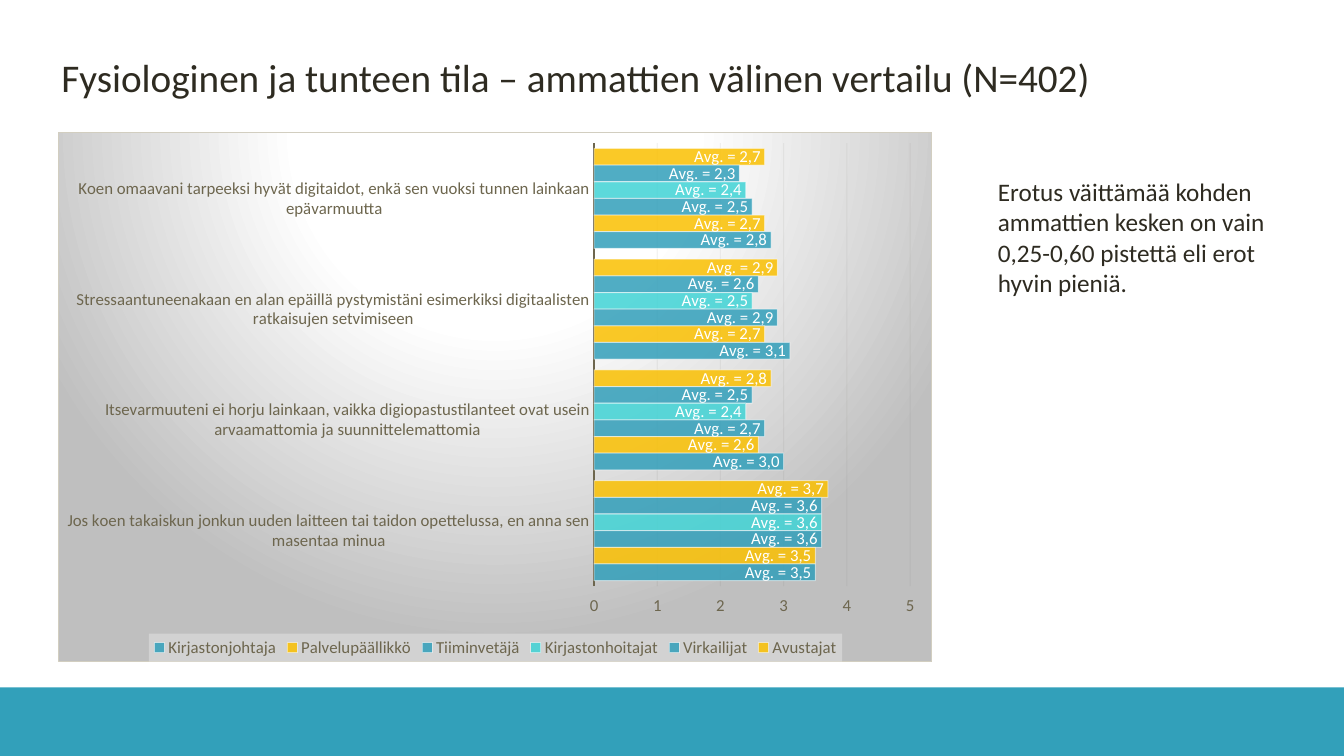
from lxml import etree
from pptx import Presentation
from pptx import util as u
from pptx.chart.data import CategoryChartData
from pptx.dml.color import RGBColor
from pptx.enum import chart as ch, shapes, text
from pptx.oxml import parse_xml
from pptx.oxml.ns import nsdecls, qn

WIDTH, HEIGHT = 40 / 3, 7.5
FONT = "Calibri"
INK, MUTED, WHITE, BAND = "2E2B21", "6D664E", "FFFFFF", "32A0BA"
BLUE, YELLOW, TURQUOISE = "329FBA", "FAC002", "40D3D5"

STATEMENTS = [
    "Koen omaavani tarpeeksi hyvät digitaidot, enkä sen vuoksi tunnen lainkaan epävarmuutta",
    "Stressaantuneenakaan en alan epäillä pystymistäni esimerkiksi digitaalisten ratkaisujen setvimiseen",
    "Itsevarmuuteni ei horju lainkaan, vaikka digiopastustilanteet ovat usein arvaamattomia ja suunnittelemattomia",
    "Jos koen takaiskun jonkun uuden laitteen tai taidon opettelussa, en anna sen masentaa minua",
]
PROFESSIONS = [
    ("Avustajat", YELLOW, (2.7, 2.9, 2.8, 3.7)),
    ("Virkailijat", BLUE, (2.3, 2.6, 2.5, 3.6)),
    ("Kirjastonhoitajat", TURQUOISE, (2.4, 2.5, 2.4, 3.6)),
    ("Tiiminvetäjä", BLUE, (2.5, 2.9, 2.7, 3.6)),
    ("Palvelupäällikkö", YELLOW, (2.7, 2.7, 2.6, 3.5)),
    ("Kirjastonjohtaja", BLUE, (2.8, 3.1, 3.0, 3.5)),
]
CHART_BACKGROUND = f"""<c:spPr {nsdecls('c', 'a')}>
  <a:gradFill><a:gsLst>
    <a:gs pos="0"><a:srgbClr val="FFFFFF"/></a:gs>
    <a:gs pos="39000"><a:srgbClr val="FFFFFF"/></a:gs>
    <a:gs pos="100000"><a:srgbClr val="BFBFBF"/></a:gs>
  </a:gsLst><a:path path="circle">
    <a:fillToRect l="50000" t="-80000" r="50000" b="180000"/>
  </a:path></a:gradFill>
  <a:ln w="9525"><a:solidFill><a:srgbClr val="D2CEC0"/></a:solidFill></a:ln>
</c:spPr>"""
LEGEND_BACKGROUND = f"""<c:spPr {nsdecls('c', 'a')}>
  <a:solidFill><a:srgbClr val="F2F2F2"><a:alpha val="39000"/></a:srgbClr></a:solidFill>
</c:spPr>"""


def rgb(color):
    return RGBColor.from_string(color)


def apply(target, values):
    for name, value in values.items():
        setattr(target, name, value)


def style_font(font, size, color):
    apply(font, {"name": FONT, "size": u.Pt(size), "bold": False})
    font.color.rgb = rgb(color)


def paint(fill, color, opacity=100):
    fill.solid()
    fill.fore_color.rgb = rgb(color)
    if opacity < 100:
        for shade in fill._xPr.find(qn("a:solidFill")):
            etree.SubElement(shade, qn("a:alpha")).set("val", str(opacity * 1000))


def stroke(line, color, width, opacity=100):
    paint(line.fill, color, opacity)
    line.width = u.Pt(width)


def box(*lengths):
    return [u.Inches(length) for length in lengths]


def add_panel(slide, place, color):
    panel = slide.shapes.add_shape(shapes.MSO_SHAPE.RECTANGLE, *box(*place))
    panel.shadow.inherit = False
    paint(panel.fill, color)
    panel.line.fill.background()
    return panel


def write(shape, wording, size, anchor):
    frame = shape.text_frame
    apply(frame, {
        "word_wrap": True, "vertical_anchor": anchor,
        "auto_size": text.MSO_AUTO_SIZE.SHAPE_TO_FIT_TEXT,
        "margin_left": u.Inches(0.13), "margin_right": u.Inches(0.13),
        "margin_top": u.Inches(0.07), "margin_bottom": u.Inches(0.07),
    })
    paragraph = frame.paragraphs[0]
    paragraph.text = wording
    paragraph.alignment = text.PP_ALIGN.LEFT
    style_font(paragraph.runs[0].font, size, INK)


def style_axes(chart):
    statements, scale = chart.category_axis, chart.value_axis
    for axis in (statements, scale):
        apply(axis, {"major_tick_mark": ch.XL_TICK_MARK.NONE,
                     "minor_tick_mark": ch.XL_TICK_MARK.NONE})
        style_font(axis.tick_labels.font, 12, MUTED)
    apply(statements, {"reverse_order": True, "has_major_gridlines": False})
    stroke(statements.format.line, MUTED, 1.5)
    # Reversed statements put the scale on top; high labels bring it to the bottom
    apply(scale, {"minimum_scale": 0, "maximum_scale": 5, "major_unit": 1,
                  "has_major_gridlines": True,
                  "tick_label_position": ch.XL_TICK_LABEL_POSITION.HIGH})
    apply(scale.tick_labels, {"number_format": "General", "number_format_is_linked": False})
    scale.format.line.fill.background()
    stroke(scale.major_gridlines.format.line, "3B372A", 0.75, 5)


def style_bars(bars, color, averages):
    paint(bars.format.fill, color, 85)
    stroke(bars.format.line, WHITE, 0.75, 50)
    bars.invert_if_negative = False
    for index, average in enumerate(averages):
        label = bars.points[index].data_label
        paragraph = label.text_frame.paragraphs[0]
        paragraph.text = "Avg. = " + str(average).replace(".", ",")
        style_font(paragraph.runs[0].font, 12, WHITE)
        label.position = ch.XL_LABEL_POSITION.INSIDE_END


def add_comparison(slide, place):
    averages_data = CategoryChartData(number_format="0.0")
    averages_data.categories = STATEMENTS
    for profession, _, averages in PROFESSIONS:
        averages_data.add_series(profession, averages)
    chart = slide.shapes.add_chart(
        ch.XL_CHART_TYPE.BAR_CLUSTERED, *box(*place), averages_data).chart
    chart.has_title = False
    style_font(chart.font, 10, INK)
    apply(chart.plots[0], {"gap_width": 65, "overlap": 0, "vary_by_categories": False})
    style_axes(chart)
    for bars, (_, color, averages) in zip(chart.plots[0].series, PROFESSIONS):
        style_bars(bars, color, averages)

    # Legend and backgrounds
    chart.has_legend = True
    apply(chart.legend, {"position": ch.XL_LEGEND_POSITION.BOTTOM, "include_in_layout": False})
    style_font(chart.legend.font, 12, MUTED)
    space = chart._chartSpace
    space.find(qn("c:chart")).addnext(parse_xml(CHART_BACKGROUND))
    overlay = space.find(".//" + qn("c:legend")).find(qn("c:overlay"))
    overlay.addnext(parse_xml(LEGEND_BACKGROUND))


def main():
    deck = Presentation()
    apply(deck, {"slide_width": u.Inches(WIDTH), "slide_height": u.Inches(HEIGHT)})
    slide = deck.slides.add_slide(deck.slide_layouts[6])

    # Bottom band
    band_top = 6.82
    add_panel(slide, (0, band_top, WIDTH, HEIGHT - band_top), BAND)

    # Title
    title = slide.shapes.add_textbox(*box(0.48, 0.46, 10.73, 0.61))
    write(title, "Fysiologinen ja tunteen tila – ammattien välinen vertailu (N=402)",
          28, text.MSO_ANCHOR.MIDDLE)

    # Averages by profession
    add_comparison(slide, (0.58, 1.31, 8.67, 5.26))

    # Conclusion
    conclusion = add_panel(slide, (9.77, 1.68, 3.24, 1.35), WHITE)
    write(conclusion, "Erotus väittämää kohden ammattien kesken on vain 0,25-0,60 pistettä "
          "eli erot hyvin pieniä.", 18, text.MSO_ANCHOR.TOP)

    deck.save("out.pptx")


if __name__ == "__main__":
    main()
